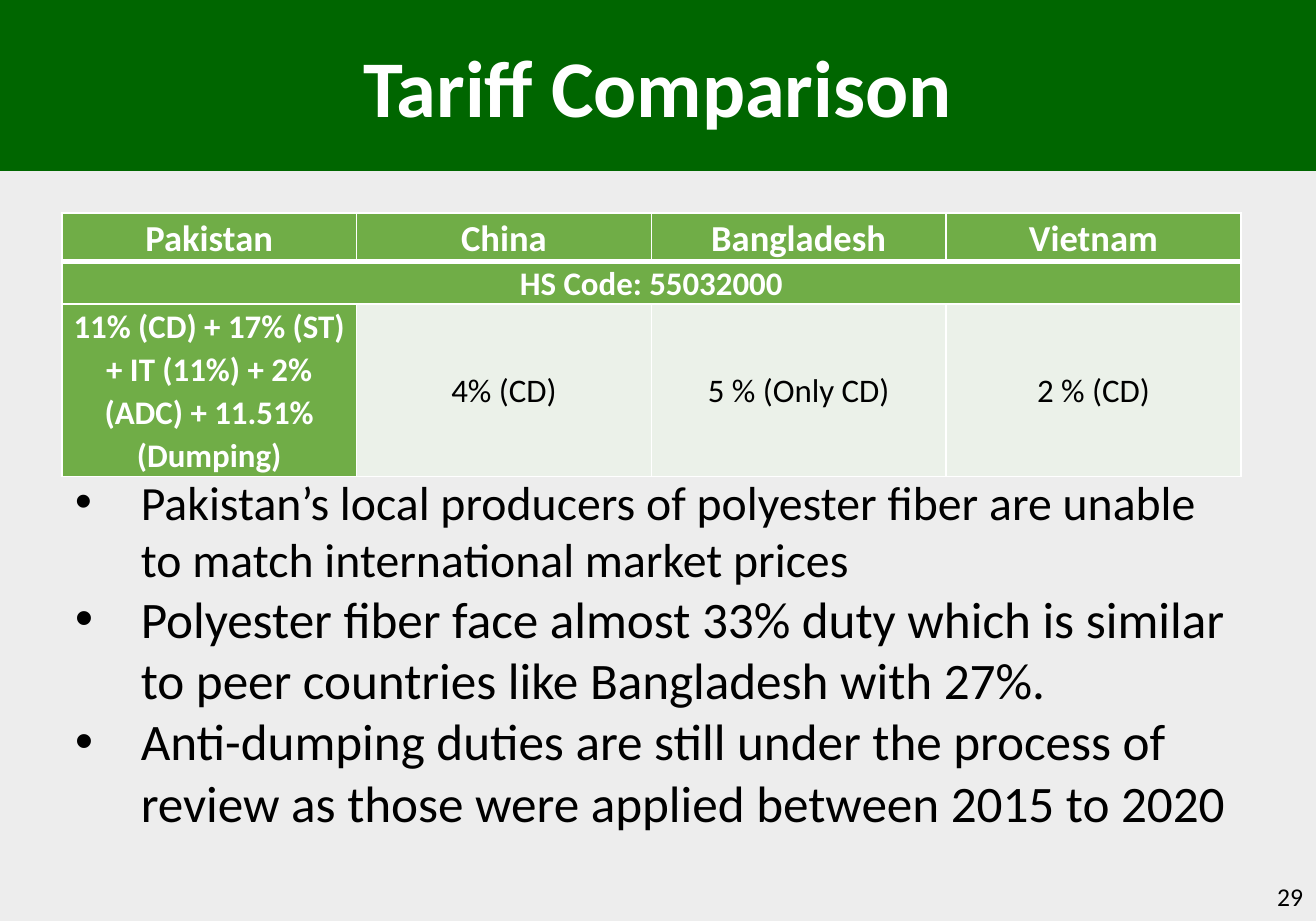
from lxml import etree
from pptx import Presentation
from pptx.dml.color import RGBColor
from pptx.enum.text import MSO_ANCHOR, MSO_AUTO_SIZE, PP_ALIGN
from pptx.oxml.ns import qn
from pptx.util import Pt

TITLE = "Tariff Comparison"
COUNTRIES = ["Pakistan", "China", "Bangladesh", "Vietnam"]
HS_CODE = "HS Code: 55032000"
TARIFFS = [
    "11% (CD) + 17% (ST) + IT (11%) + 2% (ADC) + 11.51% (Dumping)",
    "4% (CD)",
    "5 % (Only CD)",
    "2 % (CD)",
]
FINDINGS = [
    ("Pakistan’s local producers of polyester fiber are unable to match international market prices", 26.1),
    ("Polyester fiber face almost 33% duty which is similar to peer countries like Bangladesh with 27%.", 28),
    ("Anti-dumping duties are still under the process of review as those were applied between 2015 to 2020", 28),
]
PAGE_NUMBER = "29"

FONT = "Calibri"
WHITE = RGBColor(0xFF, 0xFF, 0xFF)
BLACK = RGBColor(0x00, 0x00, 0x00)
BACKGROUND = RGBColor(0xED, 0xED, 0xED)
BANNER = RGBColor(0x00, 0x66, 0x00)
GREEN = RGBColor(0x70, 0xAD, 0x47)
PALE = RGBColor(0xEB, 0xF1, 0xE9)

CENTER, RIGHT, LEFT = PP_ALIGN.CENTER, PP_ALIGN.RIGHT, PP_ALIGN.LEFT
MIDDLE, TOP = MSO_ANCHOR.MIDDLE, MSO_ANCHOR.TOP
NO_FIT, GROW = MSO_AUTO_SIZE.NONE, MSO_AUTO_SIZE.SHAPE_TO_FIT_TEXT

PX = 9144
SLIDE_SIZE = (1000, 700)
BANNER_BOX = (0, 0, 1000, 130)
TABLE_BOX = (47, 162, 896, 200)
ROW_HEIGHTS = [37, 32, 131]
FINDINGS_BOX = (47, 354, 897, 287)
NUMBER_BOX = (775, 663, 225, 37)
BULLET_INDENT = 50
CELL_MARGIN = 7
HEADER_RULE = 3
THIN_RULE = 1


def px(values):
    return [value * PX for value in values]


def apply(target, formats):
    for name, value in formats.items():
        setattr(target, name, value)


def place(shape, box):
    apply(shape, dict(zip(("left", "top", "width", "height"), px(box))))


def write(paragraph, text, size, color, bold=False, **layout):
    paragraph.text = text
    apply(paragraph, layout)
    apply(paragraph.font, {"name": FONT, "size": Pt(size), "bold": bold})
    paragraph.font.color.rgb = color


def draw_borders(cell, widths):
    properties = cell._tc.get_or_add_tcPr()
    for side, width in zip("LRTB", widths):
        line = etree.SubElement(properties, qn(f"a:ln{side}"), w=str(Pt(width)))
        fill = etree.SubElement(line, qn("a:solidFill"))
        etree.SubElement(fill, qn("a:srgbClr"), val=str(WHITE))


def add_title(slide):
    title = slide.shapes.title
    place(title, BANNER_BOX)
    title.fill.solid()
    title.fill.fore_color.rgb = BANNER
    apply(title.text_frame, {"vertical_anchor": MIDDLE, "auto_size": NO_FIT})
    write(title.text_frame.paragraphs[0], TITLE, 44, WHITE, True, alignment=CENTER)


def add_findings(slide):
    body = slide.placeholders[1]
    place(body, FINDINGS_BOX)
    frame = body.text_frame
    apply(frame, {"vertical_anchor": TOP, "word_wrap": True, "auto_size": GROW})
    for index, (finding, size) in enumerate(FINDINGS):
        paragraph = frame.add_paragraph() if index else frame.paragraphs[0]
        properties = paragraph._p.get_or_add_pPr()
        properties.set("marL", str(BULLET_INDENT * PX))
        properties.set("indent", str(-BULLET_INDENT * PX))
        write(paragraph, finding, size, BLACK, alignment=LEFT, space_before=Pt(0))


def add_tariffs(slide):
    rows = [COUNTRIES, [HS_CODE] + [""] * (len(COUNTRIES) - 1), TARIFFS]
    table = slide.shapes.add_table(len(rows), len(COUNTRIES), *px(TABLE_BOX)).table
    apply(table, {"first_row": False, "horz_banding": False})
    for column in table.columns:
        column.width = TABLE_BOX[2] // len(COUNTRIES) * PX
    for r, texts in enumerate(rows):
        table.rows[r].height = ROW_HEIGHTS[r] * PX
        top = HEADER_RULE if r == 1 else THIN_RULE
        bottom = HEADER_RULE if r == 0 else THIN_RULE
        for c, text in enumerate(texts):
            cell = table.cell(r, c)
            plain = r == 2 and c > 0
            draw_borders(cell, (THIN_RULE, THIN_RULE, top, bottom))
            cell.fill.solid()
            cell.fill.fore_color.rgb = PALE if plain else GREEN
            apply(cell, {
                "margin_left": CELL_MARGIN * PX,
                "margin_right": CELL_MARGIN * PX,
                "margin_top": 0,
                "margin_bottom": 0,
                "vertical_anchor": MIDDLE if r == 2 else TOP,
            })
            write(cell.text_frame.paragraphs[0], text, 18 if r else 20,
                  BLACK if plain else WHITE, not plain,
                  alignment=CENTER, line_spacing=1.07)
    table.cell(1, 0).merge(table.cell(1, len(COUNTRIES) - 1))


def add_page_number(slide):
    frame = slide.shapes.add_textbox(*px(NUMBER_BOX)).text_frame
    apply(frame, {"word_wrap": True, "vertical_anchor": MIDDLE})
    write(frame.paragraphs[0], PAGE_NUMBER, 14, BLACK, alignment=RIGHT)


def main():
    deck = Presentation()
    deck.slide_width, deck.slide_height = px(SLIDE_SIZE)
    slide = deck.slides.add_slide(deck.slide_layouts[1])
    slide.background.fill.solid()
    slide.background.fill.fore_color.rgb = BACKGROUND
    add_title(slide)
    add_findings(slide)
    add_tariffs(slide)
    add_page_number(slide)
    deck.save("out.pptx")


if __name__ == "__main__":
    main()
